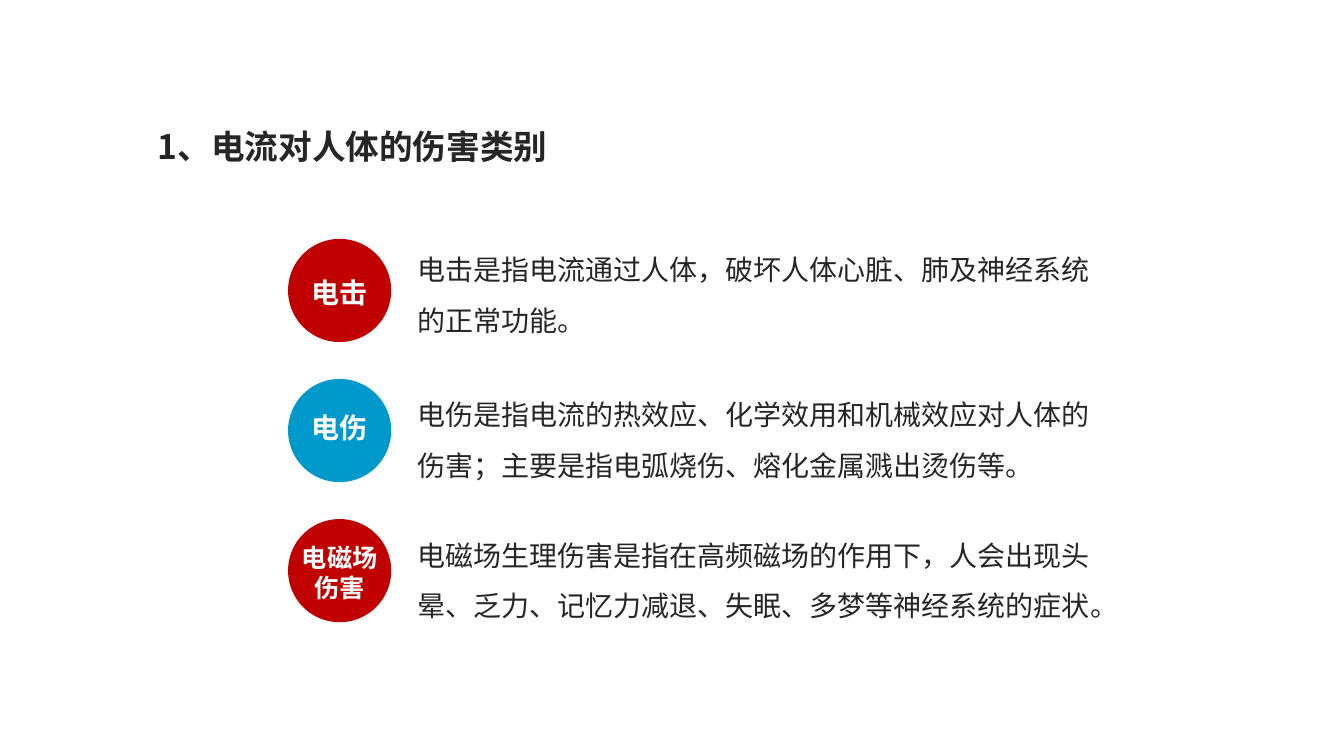
from lxml import etree
from pptx import Presentation
from pptx.dml.color import RGBColor
from pptx.enum.shapes import MSO_SHAPE
from pptx.enum.text import PP_ALIGN
from pptx.oxml.ns import qn
from pptx.util import Cm, Pt

OVAL = MSO_SHAPE.OVAL
LEFT, CENTER = PP_ALIGN.LEFT, PP_ALIGN.CENTER

RED = RGBColor(0xC0, 0x00, 0x00)
BLUE = RGBColor(0x00, 0x99, 0xCC)
DARK = RGBColor(0x26, 0x26, 0x26)
WHITE = RGBColor(0xFF, 0xFF, 0xFF)
FONT = "Noto Sans CJK SC"
LINE_HEIGHT = 1.2

CIRCLE = 2.6
ROW_PITCH = 3.53

HARMS = [
    ("电击", 20, 0.79, RED, -0.2,
     "电击是指电流通过人体，破坏人体心脏、肺及神经系统的正常功能。"),
    ("电伤", 20, 0.66, BLUE, -0.07,
     "电伤是指电流的热效应、化学效用和机械效应对人体的伤害；主要是指电弧烧伤、熔化金属溅出烫伤等。"),
    ("电磁场伤害", 18, 0.46, RED, -0.07,
     "电磁场生理伤害是指在高频磁场的作用下，人会出现头晕、乏力、记忆力减退、失眠、多梦等神经系统的症状。"),
]


def add_text(s, text, x, y, w, h, size=20, color=DARK, bold=False,
             align=LEFT, spacing=1.0):
    tf = s.shapes.add_textbox(Cm(x), Cm(y), Cm(w), Cm(h)).text_frame
    tf.word_wrap = True
    p = tf.paragraphs[0]
    p.alignment = align
    p.line_spacing = Pt(round(size * LINE_HEIGHT * spacing, 1))
    r = p.add_run()
    r.text = text
    r.font.size = Pt(size)
    r.font.bold = bold
    r.font.color.rgb = color
    r.font.name = FONT
    etree.SubElement(r.font._element, qn("a:ea"), typeface=FONT)


def add_title(s, x, y, w, h):
    add_text(s, "1、电流对人体的伤害类别", x, y, w, h,
             size=24, bold=True, spacing=1.6)


def add_harm(s, x, y, w, harm):
    label, size, label_dy, color, body_dy, body = harm
    sp = s.shapes.add_shape(OVAL, Cm(x), Cm(y), Cm(CIRCLE), Cm(CIRCLE))
    sp.shadow.inherit = False
    sp.fill.solid()
    sp.fill.fore_color.rgb = color
    sp.line.fill.background()
    add_text(s, label, x - 0.05, y + label_dy, CIRCLE + 0.1,
             CIRCLE - 2 * label_dy, size=size, color=WHITE, bold=True,
             align=CENTER)
    add_text(s, body, x + 3, y + body_dy, w - 3, 2.82, spacing=1.5)


def add_harm_list(s, x, y, w):
    for i, harm in enumerate(HARMS):
        add_harm(s, x, y + i * ROW_PITCH, w, harm)


def main():
    prs = Presentation()
    prs.slide_width, prs.slide_height = Cm(33.87), Cm(19.05)
    s = prs.slides.add_slide(prs.slide_layouts[6])
    add_title(s, 3.73, 2.44, 13.31, 2.18)
    add_harm_list(s, 7.26, 6.02, 20.8)
    prs.save("out.pptx")


if __name__ == "__main__":
    main()
